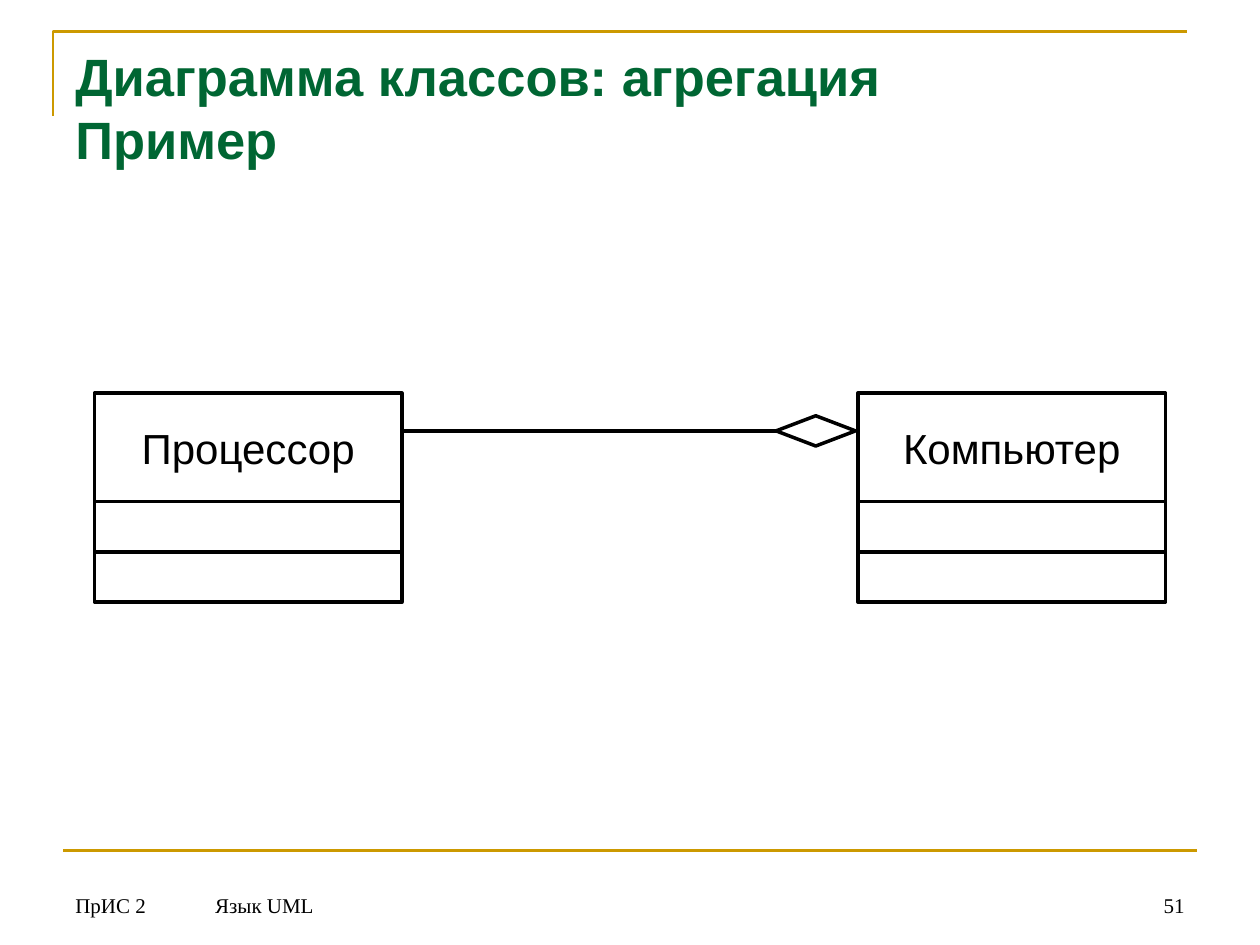
from lxml import etree
from pptx import Presentation
from pptx import util as u
from pptx.dml.color import RGBColor
from pptx.enum import shapes, text
from pptx.oxml.ns import qn

COLORS = {"gold": "CC9900", "green": "006633", "black": "000000"}
WIDTH, HEIGHT = u.Inches(10), u.Inches(7.5)


def inches(*lengths):
    return [u.Inches(length) for length in lengths]


def color(name):
    return RGBColor.from_string(COLORS[name])


def style_line(outline, name, points):
    outline.line.color.rgb = color(name)
    outline.line.width = u.Pt(points)


def write(frame, words, font, size, name="black", bold=False,
          align=text.PP_ALIGN.LEFT, anchor=text.MSO_ANCHOR.MIDDLE):
    frame.word_wrap = True
    frame.vertical_anchor = anchor
    frame.text = words
    paragraph = frame.paragraphs[0]
    paragraph.alignment = align
    paragraph.font.name = font
    paragraph.font.size = u.Pt(size)
    paragraph.font.bold = bold
    paragraph.font.color.rgb = color(name)


def add_line(slide, start, end, name, points):
    line = slide.shapes.add_connector(
        shapes.MSO_CONNECTOR.STRAIGHT, *inches(*start, *end))
    style_line(line, name, points)
    etree.SubElement(line._element.spPr, qn("a:effectLst"))
    return line


def add_outlined(slide, kind, box):
    """Add an unfilled preset shape with a black outline."""
    shape = slide.shapes.add_shape(kind, *inches(*box))
    shape.shadow.inherit = False
    shape.fill.background()
    style_line(shape, "black", 2)
    return shape


def add_header(slide, box, title):
    """Place the title and the gold corner that frames it."""
    left, top, width, height = box
    corner_left, corner_top = left - 0.08, top - 0.05
    builder = slide.shapes.build_freeform(
        *inches(corner_left, corner_top + 0.67), scale=1.0)
    builder.add_line_segments(
        [inches(corner_left, corner_top),
         inches(corner_left + width, corner_top)], close=False)
    corner = builder.convert_to_shape()
    corner.shadow.inherit = False
    corner.fill.background()
    style_line(corner, "gold", 1.5)

    heading = slide.shapes.add_textbox(*inches(left, top, width, height))
    write(heading.text_frame, title, "Arial", 30, "green", bold=True,
          anchor=text.MSO_ANCHOR.TOP)


def add_footer(slide, box, course, topic, number):
    left, top, width, height = box
    add_line(slide, (left, top), (left + width, top), "gold", 1.5)
    parts = [
        (course, 0, 0.96, text.PP_ALIGN.LEFT),
        (topic, 1.11, 7.24, text.PP_ALIGN.LEFT),
        (number, width - 0.56, 0.56, text.PP_ALIGN.RIGHT),
    ]
    for words, offset, part_width, align in parts:
        part = slide.shapes.add_textbox(
            *inches(left + offset, top + 0.08, part_width, height - 0.08))
        write(part.text_frame, words, "Times New Roman", 12, align=align,
              anchor=text.MSO_ANCHOR.BOTTOM)


def add_class(slide, box, class_name):
    """Place a UML class: a name row over two equal empty rows."""
    left, top, width, height = box
    row = 0.4
    name_height = height - 2 * row
    name_box = add_outlined(slide, shapes.MSO_SHAPE.RECTANGLE,
                            (left, top, width, name_height))
    write(name_box.text_frame, class_name, "Arial", 24,
          align=text.PP_ALIGN.CENTER)
    for index in range(2):
        add_outlined(slide, shapes.MSO_SHAPE.RECTANGLE,
                     (left, top + name_height + index * row, width, row))


def add_aggregation(slide, box, part, whole):
    """Place two classes at the box's ends, with a diamond at the whole."""
    left, top, width, height = box
    class_width = 2.44
    whole_left = left + width - class_width
    diamond_width, diamond_height, axis = 0.63, 0.24, top + 0.3
    diamond_left = whole_left - diamond_width - 0.02

    add_class(slide, (left, top, class_width, height), part)
    add_class(slide, (whole_left, top, class_width, height), whole)
    diamond = add_outlined(
        slide, shapes.MSO_SHAPE.DIAMOND,
        (diamond_left, axis - diamond_height / 2,
         diamond_width, diamond_height))
    link = add_line(slide, (left + class_width, axis), (diamond_left, axis),
                    "black", 2.25)
    link.end_connect(diamond, 1)


def main():
    deck = Presentation()
    deck.slide_width, deck.slide_height = WIDTH, HEIGHT
    slide = deck.slides.add_slide(deck.slide_layouts[6])
    add_header(slide, (0.5, 0.3, 9, 1.25),
               "Диаграмма классов: агрегация\vПример")
    add_aggregation(slide, (0.75, 3.12, 8.5, 1.66),
                    "Процессор", "Компьютер")
    add_footer(slide, (0.5, 6.75, 9, 0.58), "ПрИС 2", "Язык UML", "51")
    deck.save("out.pptx")


if __name__ == "__main__":
    main()
